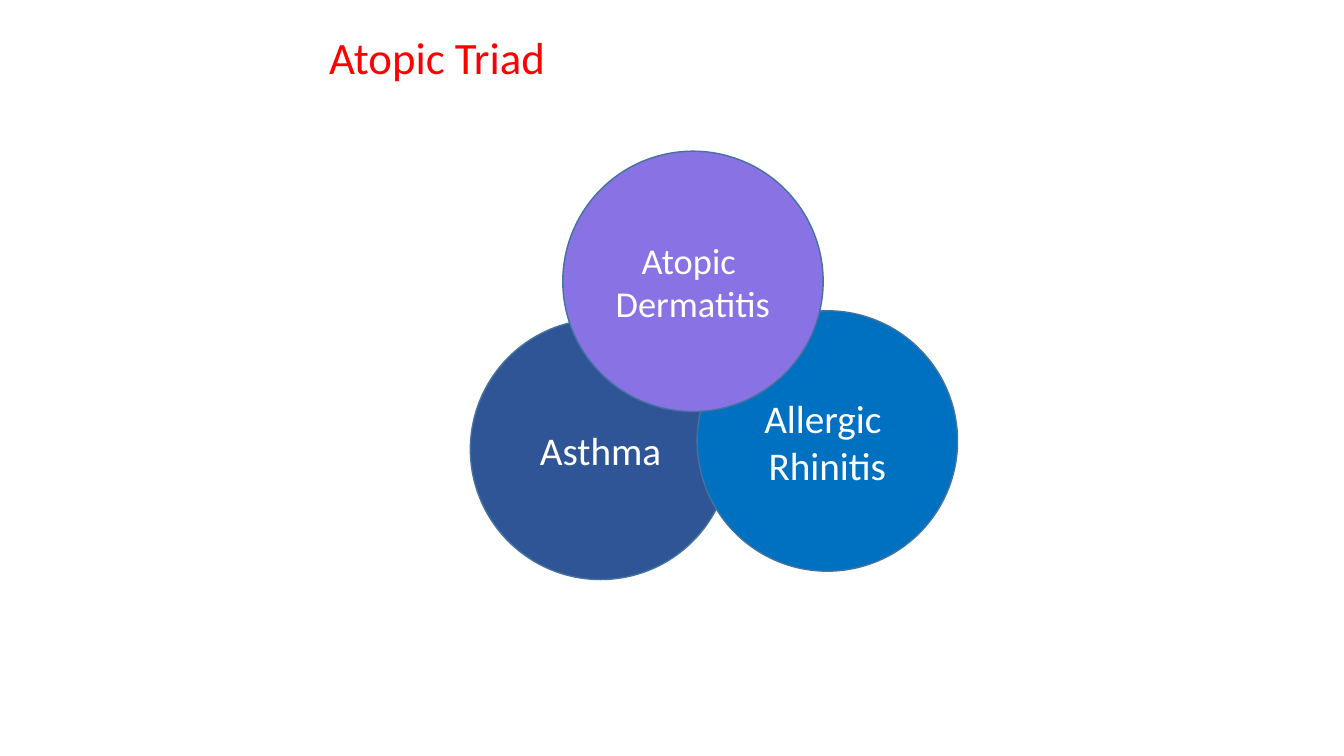
from pptx import Presentation
from pptx.dml.color import RGBColor
from pptx.enum.shapes import MSO_SHAPE
from pptx.enum.text import MSO_ANCHOR, PP_ALIGN
from pptx.util import Pt

COLORS = {"title": "FF0000", "text": "FFFFFF", "line": "43739E",
          "navy": "2F5597", "blue": "0070C0", "violet": "8872E4"}
FONT = "Calibri"
TITLE = "Atopic Triad"
SIZE = 186  # circle diameter
# lines, left, top, fill, text size; from back to front
CIRCLES = [
    (["Asthma"], 336, 228, "navy", 28),
    (["Allergic ", "Rhinitis"], 498, 222, "blue", 28),
    (["Atopic ", "Dermatitis"], 402, 108, "violet", 26),
]


def color(name):
    return RGBColor.from_string(COLORS[name])


def write(shape, lines, size, name, align):
    frame = shape.text_frame
    frame.word_wrap = True
    frame.vertical_anchor = MSO_ANCHOR.MIDDLE
    for i, line in enumerate(lines):
        para = frame.add_paragraph() if i else frame.paragraphs[0]
        para.alignment = align
        run = para.add_run()
        run.text = line
        run.font.name = FONT
        run.font.size = Pt(size)
        run.font.color.rgb = color(name)


def add_circle(slide, lines, left, top, fill, size):
    circle = slide.shapes.add_shape(
        MSO_SHAPE.OVAL, Pt(left), Pt(top), Pt(SIZE), Pt(SIZE))
    circle.shadow.inherit = False
    circle.fill.solid()
    circle.fill.fore_color.rgb = color(fill)
    circle.line.color.rgb = color("line")
    circle.line.width = Pt(1)
    write(circle, lines, size, "text", PP_ALIGN.CENTER)


def main():
    deck = Presentation()
    deck.slide_width, deck.slide_height = Pt(960), Pt(540)
    slide = deck.slides.add_slide(deck.slide_layouts[6])
    title = slide.shapes.add_textbox(Pt(228), Pt(18), Pt(612), Pt(50.4))
    write(title, [TITLE], 32, "title", PP_ALIGN.LEFT)
    title.text_frame.paragraphs[0].line_spacing = 0.9
    for circle in CIRCLES:
        add_circle(slide, *circle)
    deck.save("out.pptx")


if __name__ == "__main__":
    main()
